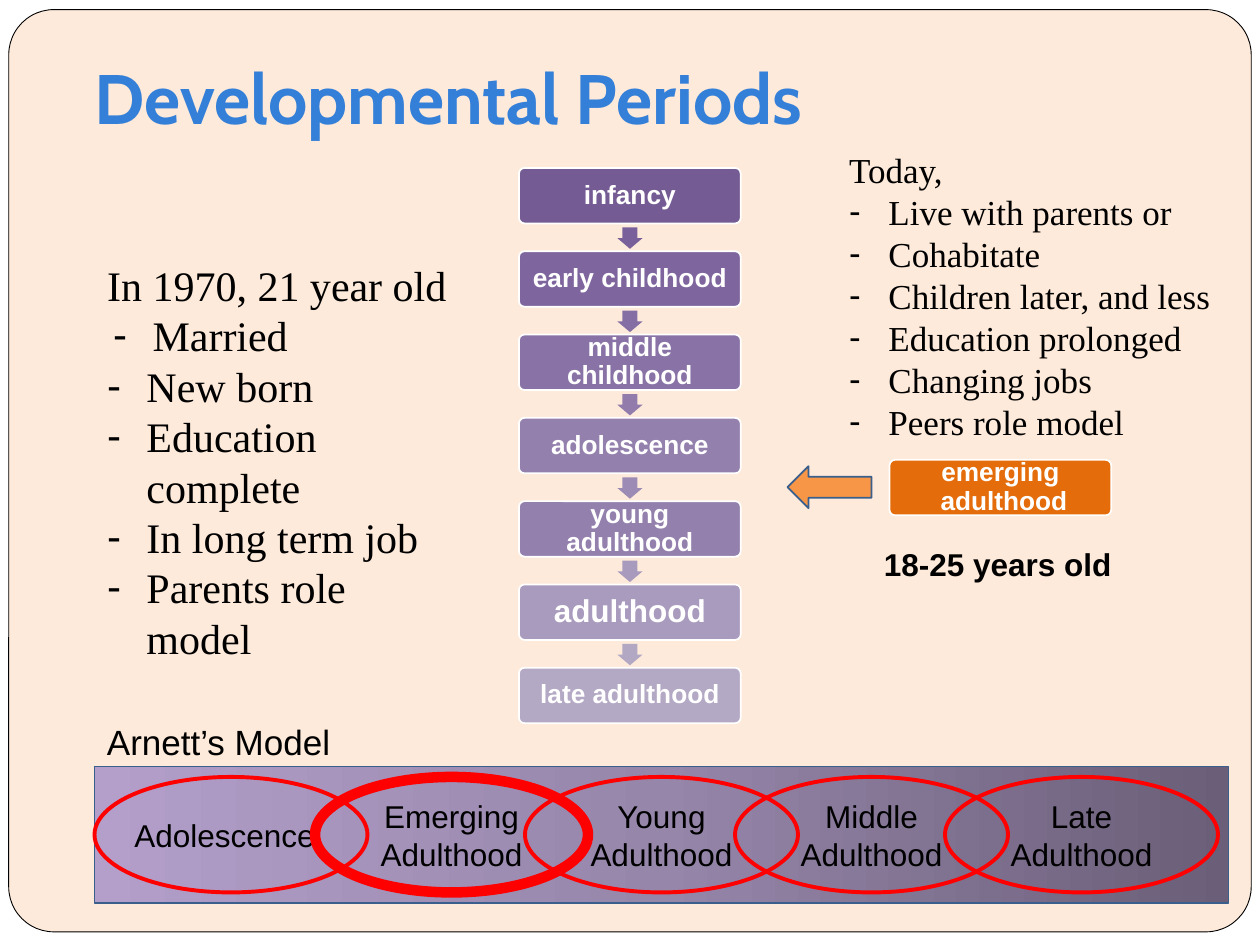
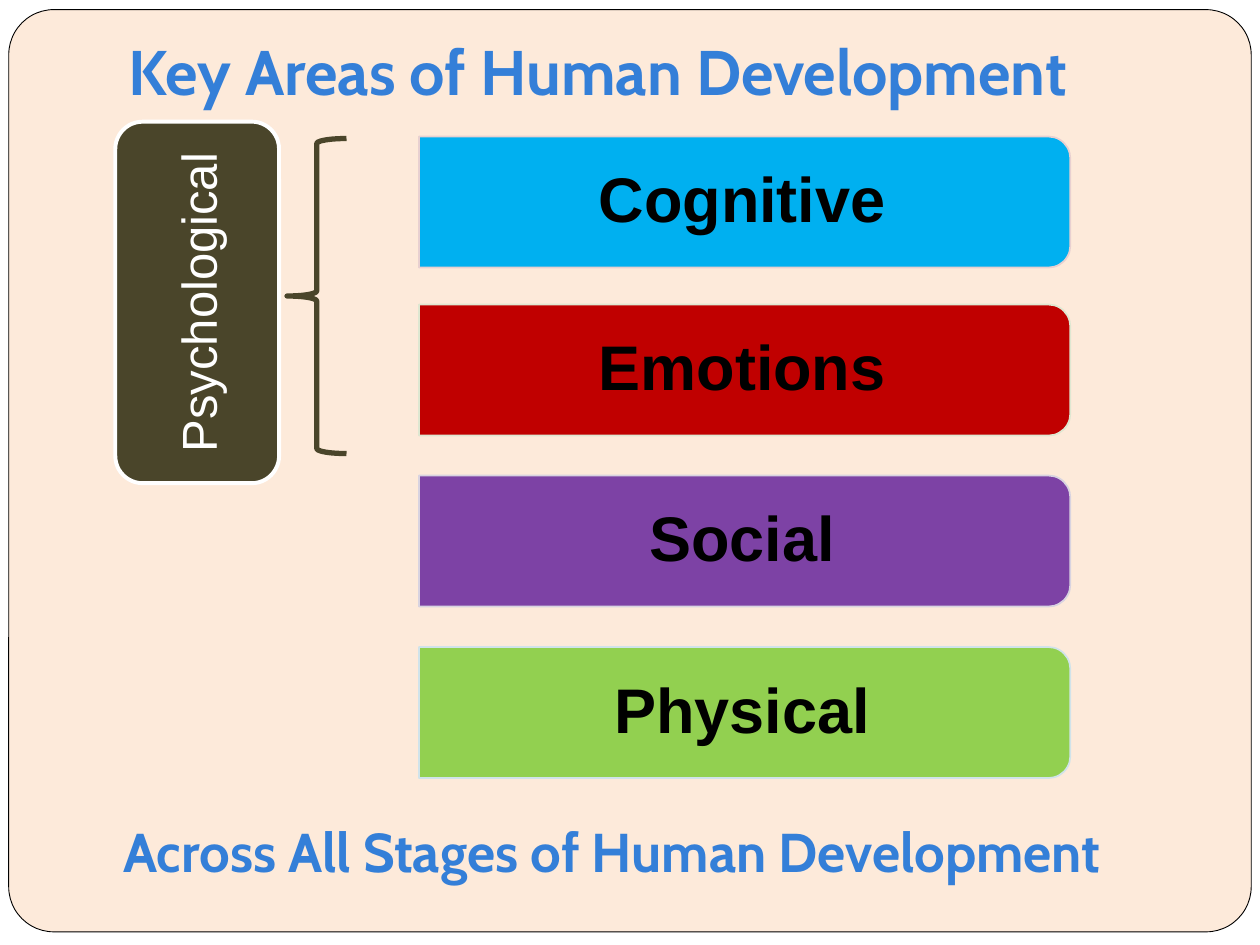
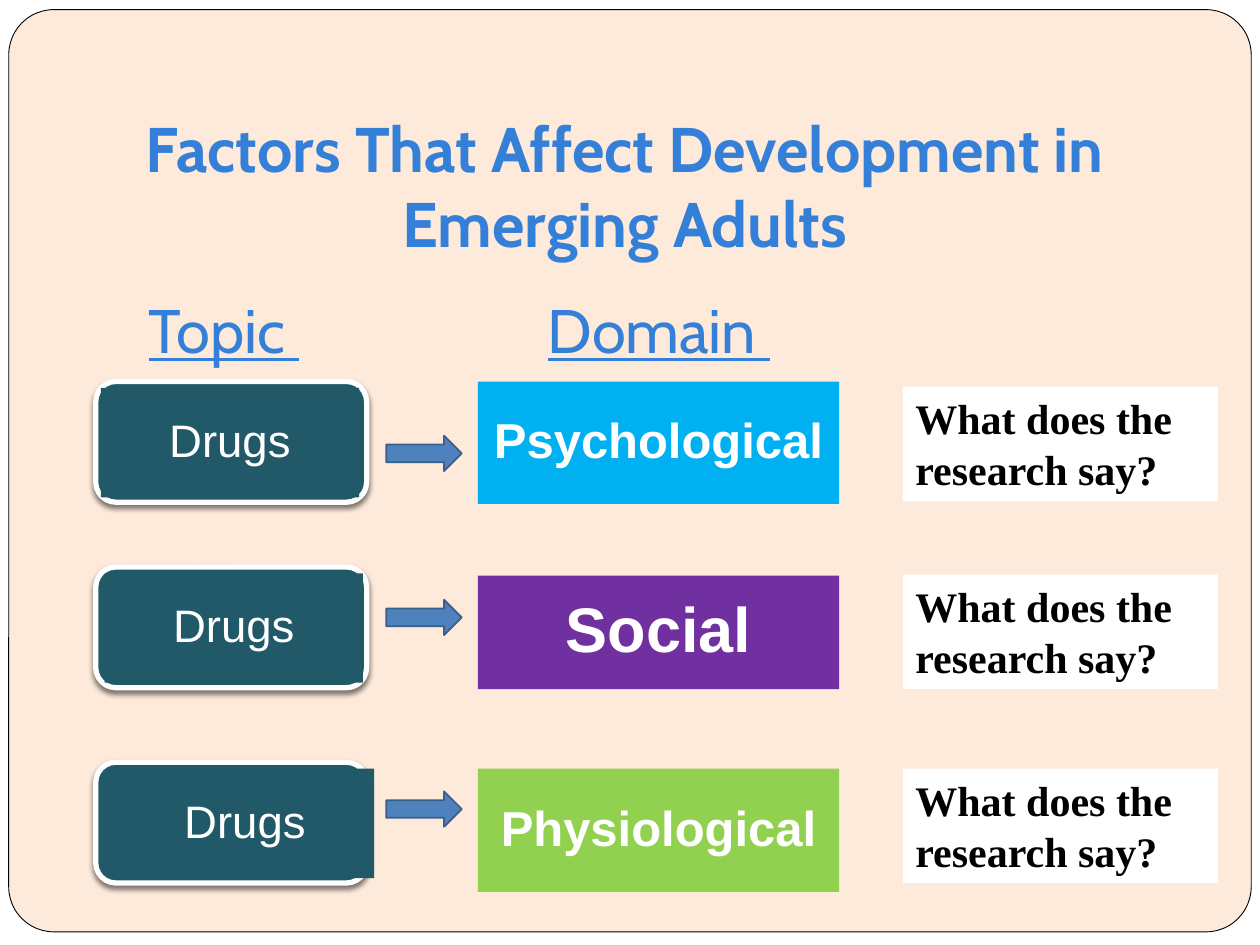
from copy import deepcopy

from lxml import etree
from pptx import Presentation
from pptx.dml.color import RGBColor
from pptx.enum import shapes, text
from pptx.oxml.ns import qn
from pptx.util import Pt

MSO = shapes.MSO_SHAPE
LEFT, CENTER = text.PP_ALIGN.LEFT, text.PP_ALIGN.CENTER
TOP, MIDDLE, BOTTOM = text.MSO_ANCHOR.TOP, text.MSO_ANCHOR.MIDDLE, text.MSO_ANCHOR.BOTTOM
BLACK, WHITE, BLUE, PEACH = "000000", "FFFFFF", "347FD8", "FDEADA"
EDGE, RED, OLIVE, TEAL = "3A5F8C", "FF0000", "4A452A", "215968"
SKY, GREEN, PURPLE = "00B0F0", "92D050", "7030A0"
HEAD_INS = (7.2, 3.6, 7.2, 7.2)
BAR_INS = (4.3, 2.2, 4.3, 2.2)


def box(s, kind, x, y, w, h, fill=None, line=None, weight=1):
    sp = s.shapes.add_shape(kind, Pt(x), Pt(y), Pt(w), Pt(h))
    sp.shadow.inherit = False
    for part, color in ((sp.fill, fill), (sp.line.fill, line)):
        if color:
            part.solid()
            part.fore_color.rgb = RGBColor.from_string(color)
        else:
            part.background()
    if line:
        sp.line.width = Pt(weight)
    return sp


def write(sp, words, size, color=BLACK, font="Arial", bold=False, align=CENTER,
          anchor=MIDDLE, ins=(7.2, 3.6, 7.2, 3.6), spacing=1.0, underline=False):
    tf = sp.text_frame
    tf.text = words
    tf.word_wrap = True
    tf.auto_size = text.MSO_AUTO_SIZE.NONE
    tf.vertical_anchor = anchor
    tf.margin_left, tf.margin_top, tf.margin_right, tf.margin_bottom = map(Pt, ins)
    for p in tf.paragraphs:
        p.alignment = align
        p.line_spacing = spacing
        p.space_before = Pt(0)
        p.font.size = Pt(size)
        p.font.name = font
        p.font.bold = bold
        p.font.underline = underline
        p.font.color.rgb = RGBColor.from_string(color)


prs = Presentation()
prs.slide_width, prs.slide_height = Pt(720), Pt(540)

slides = []
for layout, title, size, align, x, y, w, h in (
    (3, "Developmental Periods", 40, LEFT, 47, 18, 612, 68.4),
    (5, "Key Areas of Human Development", 36, LEFT, 66, -21, 612, 90),
    (5, "Factors That Affect Development in\vEmerging Adults", 36, CENTER, 51, 66, 612, 90),
):
    s = prs.slides.add_slide(prs.slide_layouts[layout])
    sp = s.shapes.title
    sp.left, sp.top, sp.width, sp.height = Pt(x), Pt(y), Pt(w), Pt(h)
    write(sp, title, size, BLUE, "Cabin", True, align, BOTTOM, HEAD_INS)
    slides.append(s)
periods, areas, factors = slides

frame = box(periods, MSO.ROUNDED_RECTANGLE, 5, 5.5, 710, 527, PEACH, BLACK, 0.5)
frame.adjustments[0] = 0.049
frame._element.nvSpPr.cNvPr.set("id", "99")
prs.slide_master.shapes._spTree.insert(2, frame._element)

# slide 1
s = periods
for idx, size, (x, y, w, h), items in (
    (1, 24, (54, 144.7, 211.7, 240),
     ["In 1970, 21 year old", "Married", "New born", "Education complete",
      "In long term job", "Parents role model"]),
    (2, 20, (478, 81.4, 240, 177),
     ["Today,", "Live with parents or", "Cohabitate", "Children later, and less",
      "Education prolonged", "Changing jobs", "Peers role model"]),
):
    sp = s.placeholders[idx]
    sp.left, sp.top, sp.width, sp.height = Pt(x), Pt(y), Pt(w), Pt(h)
    write(sp, "\n".join(items), size, font="Times New Roman", align=LEFT, anchor=TOP)
    for p in sp.text_frame.paragraphs:
        pPr = p._p.get_or_add_pPr()
        heading = p.text == items[0]
        margin = 0 if heading else 26 if p.text == "Married" else 22.5
        pPr.set("marL", str(Pt(margin)))
        pPr.set("indent", str(-Pt(min(margin, 22.5))))
        bullet = etree.Element(qn("a:buNone" if heading else "a:buChar"))
        if not heading:
            bullet.set("char", "-")
        pPr.find(qn("a:defRPr")).addprevious(bullet)

band = box(s, MSO.RECTANGLE, 54, 438, 648, 78, PEACH, EDGE)
band.fill.gradient()
band.fill.gradient_angle = 0
stops = band._element.spPr.find(".//" + qn("a:gsLst"))
stops.insert(1, deepcopy(stops[0]))
for stop, place, color in zip(band.fill.gradient_stops, (0, 0.5, 1),
                              ("B39FCA", "9686AA", "6A5E78")):
    stop.position = place
    stop.color.rgb = RGBColor.from_string(color)

for x, stage in zip((54, 180, 300, 420, 540),
                    ("Adolescence", "Emerging\vAdulthood", "Young\vAdulthood",
                     "Middle\vAdulthood", "Late\vAdulthood")):
    first = stage == "Adolescence"
    sp = box(s, MSO.OVAL, x, 444, 156, 66, None, RED, 6 if "Emerging" in stage else 2.25)
    write(sp, stage, 18, align=LEFT if first else CENTER,
          ins=(0, 3.6, 0, 3.6) if first else (7.2, 3.6, 7.2, 3.6))

sp = s.shapes.add_textbox(Pt(54), Pt(408), Pt(162), Pt(32))
write(sp, "Arnett’s Model", 20, align=LEFT, anchor=TOP)
sp = s.shapes.add_textbox(Pt(498), Pt(308), Pt(155), Pt(29))
write(sp, "18-25 years old", 18, bold=True, align=LEFT, anchor=TOP)
box(s, MSO.LEFT_ARROW, 450, 266.4, 48, 24, "F79646", EDGE)

step = 47.6
chain = [("infancy", "745B93"), ("early childhood", "7E659E"),
         ("middle childhood", "8973A6"), ("adolescence", "9380AD"),
         ("young adulthood", "9380AD"), ("adulthood", "A99BBD"),
         ("late adulthood", "B4A9C5")]
cards = [(296.6, 96 + step * i, name, fill) for i, (name, fill) in enumerate(chain)]
cards.append((508.3, 262.8, "emerging\v adulthood", "E46C0A"))
for x, y, name, fill in cards:
    sp = box(s, MSO.ROUNDED_RECTANGLE, x, y, 126.7, 31.7, fill, WHITE)
    sp.adjustments[0] = 0.1
    write(sp, name, 18 if name == "adulthood" else 15, WHITE, bold=True,
          ins=(5, 5, 5, 5), spacing=0.9)

for i, fill in enumerate(("7A609B", "856EA4", "917CAB", "9C8BB4", "A89ABC", "B3A8C4")):
    sp = box(s, MSO.DOWN_ARROW, 352.8, 130 + step * i, 14.4, 12.2, fill)
    sp.adjustments[0], sp.adjustments[1] = 0.6, 0.5

# slide 2
s = areas
bar_w, bar_h, mid_x = 372.2, 74.9, 425.5
for mid_y, name, fill, edge in (
    (115.5, "Cognitive", SKY, "E8D0D0"),
    (211.5, "Emotions", "C00000", "DEE7D1"),
    (309.2, "Social", PURPLE, "D8D3E0"),
    (407.2, "Physical", GREEN, "D0E3EA"),
):
    sp = box(s, MSO.ROUND_2_SAME_RECTANGLE, mid_x - bar_h / 2, mid_y - bar_w / 2,
             bar_h, bar_w, fill, edge)
    sp.rotation = 90
    if fill == PURPLE:
        color = sp._element.spPr.find(qn("a:solidFill"))[0]
        etree.SubElement(color, qn("a:alpha"), val="90000")
    sp = s.shapes.add_textbox(Pt(239.8), Pt(mid_y - 33.8), Pt(368.6), Pt(67.6))
    write(sp, name, 36, bold=True, ins=BAR_INS, spacing=0.9)

sp = s.shapes.add_textbox(Pt(63.4), Pt(422), Pt(654), Pt(90))
write(sp, "Across All Stages of Human Development", 31.2, BLUE, "Cabin", True,
      LEFT, BOTTOM, HEAD_INS)
box(s, MSO.LEFT_BRACE, 164, 79.2, 34, 180, None, OLIVE, 3)
sp = box(s, MSO.ROUNDED_RECTANGLE, 9.4, 126, 206.6, 93.6, OLIVE, WHITE, 2.25)
sp.rotation = 270
write(sp, "Psychological", 28, WHITE)

# slide 3
s = factors
for x, name in ((78, "Topic "), (306, "Domain ")):
    sp = s.shapes.add_textbox(Pt(x), Pt(126), Pt(144), Pt(90))
    write(sp, name, 35.1, BLUE, "Cabin", False, LEFT, BOTTOM, HEAD_INS, underline=True)

for domain, size, fill, y, h, topic_y, label_x, arrow_y, ask_y in (
    ("Psychological", 28, SKY, 218, 70, 218, 57.6, 249, 221),
    ("Social", 36, PURPLE, 329, 64.8, 324, 59.8, 342.7, 328.3),
    ("Physiological", 28, GREEN, 439.2, 70.5, 435.6, 66.2, 452.2, 439.2),
):
    sp = box(s, MSO.RECTANGLE, 273, y, 206.5, h, fill)
    write(sp, domain, size, WHITE, bold=True, ins=BAR_INS, spacing=0.9)
    sp = box(s, MSO.ROUNDED_RECTANGLE, 54.7, topic_y, 154.8, 69, TEAL, WHITE, 3)
    shadow = etree.SubElement(sp._element.spPr.find(qn("a:effectLst")), qn("a:outerShdw"),
                              blurRad=str(Pt(3)), dist=str(Pt(2)), dir="5400000")
    color = etree.SubElement(shadow, qn("a:srgbClr"), val=BLACK)
    etree.SubElement(color, qn("a:alpha"), val="50000")
    sp = box(s, MSO.RECTANGLE, label_x, topic_y + 3.6, 147.6, 62.6, TEAL)
    write(sp, "Drugs", 26, WHITE, ins=(8, 3.6, 8, 3.6), spacing=0.9)
    box(s, MSO.RIGHT_ARROW, 220.7, arrow_y, 43.2, 20.2, "4F81BD", EDGE)
    sp = box(s, MSO.RECTANGLE, 516, ask_y, 180, 65.5, WHITE)
    write(sp, "What does the research say?", 24, font="Times New Roman", bold=True,
          align=LEFT, anchor=TOP)

prs.save("out.pptx")
